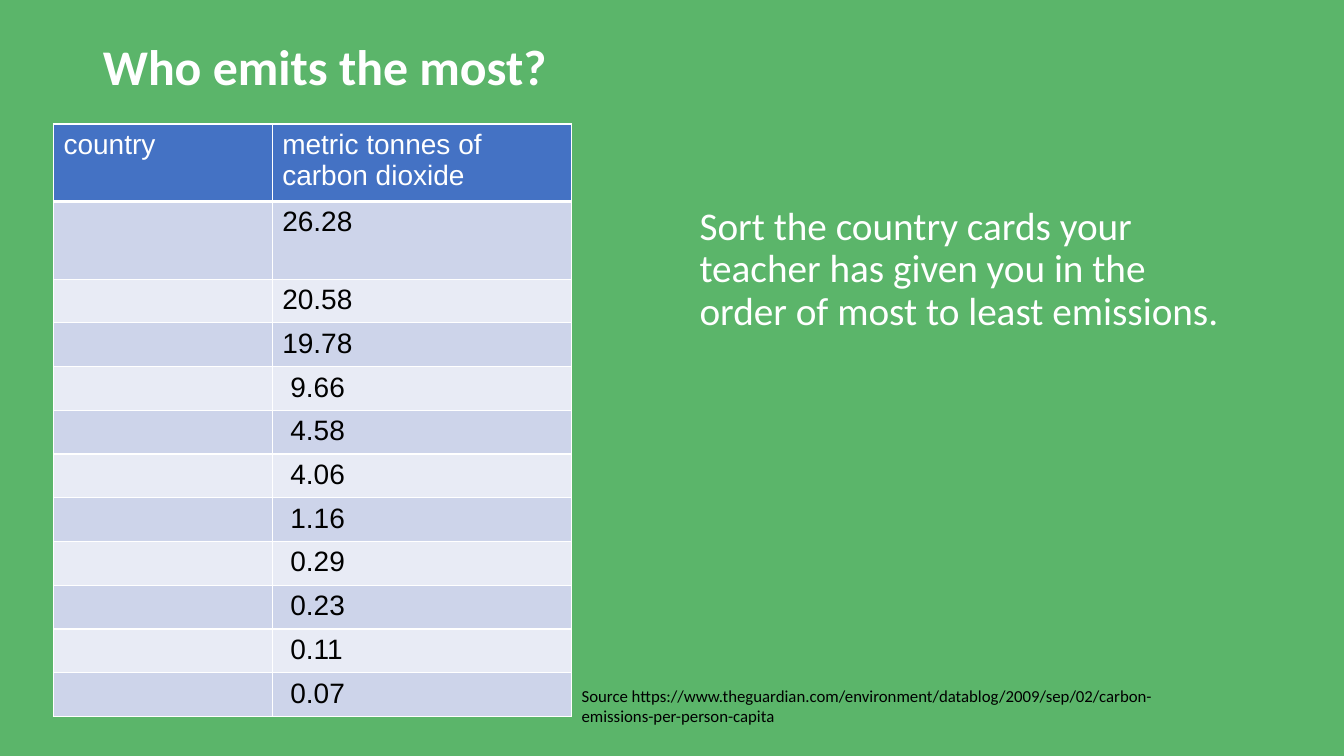
from lxml import etree
from pptx import Presentation
from pptx import util as u
from pptx.dml.color import RGBColor
from pptx.enum import text as t
from pptx.oxml.ns import qn

PX = 9144  # 100 px to the inch
HUES = {
    "green": "5BB56A", "blue": "4472C4", "dark": "CDD4EA", "pale": "E8EBF5",
    "white": "FFFFFF", "black": "000000",
}
TONNES = ["26.28", "20.58", "19.78", "9.66", "4.58", "4.06",
          "1.16", "0.29", "0.23", "0.11", "0.07"]


def hue(name):
    return RGBColor.from_string(HUES[name])


class Deck:
    def __init__(self):
        self.prs = Presentation()
        self.prs.slide_width = 1333 * PX
        self.prs.slide_height = 750 * PX
        self.slide = self.prs.slides.add_slide(self.prs.slide_layouts[5])
        fill = self.slide.background.fill
        fill.solid()
        fill.fore_color.rgb = hue("green")

    def style(self, para, size, color, face="Calibri", bold=False):
        font = para.font
        font.name, font.size, font.bold = face, u.Pt(size), bold
        font.color.rgb = hue(color)

    def title(self, words, x, y, w, h):
        box = self.slide.shapes.title
        box.left, box.top, box.width, box.height = (n * PX for n in (x, y, w, h))
        frame = box.text_frame
        frame.text = words
        frame.auto_size = t.MSO_AUTO_SIZE.NONE
        frame.vertical_anchor = t.MSO_ANCHOR.MIDDLE
        para = frame.paragraphs[0]
        para.alignment = t.PP_ALIGN.LEFT
        para.line_spacing = 0.9
        self.style(para, 35.6, "white", bold=True)

    def text(self, words, x, y, w, h, size, color, lead=1.0):
        box = self.slide.shapes.add_textbox(*(n * PX for n in (x, y, w, h)))
        frame = box.text_frame
        frame.word_wrap = True
        frame.text = words
        para = frame.paragraphs[0]
        para.line_spacing = lead
        self.style(para, size, color)

    def edge(self, cell, top, base):
        """Draw white borders round a cell, widths in points."""
        props = cell._tc.get_or_add_tcPr()
        sides = {"lnL": 1, "lnR": 1, "lnT": top, "lnB": base}
        for i, (side, width) in enumerate(sides.items()):
            line = etree.Element(qn(f"a:{side}"), w=str(u.Pt(width)))
            solid = etree.SubElement(line, qn("a:solidFill"))
            etree.SubElement(solid, qn("a:srgbClr"), val=HUES["white"])
            props.insert(i, line)

    def table(self, rows, x, y, cols, highs):
        frame = self.slide.shapes.add_table(
            len(rows), len(cols), x * PX, y * PX, sum(cols) * PX, sum(highs) * PX)
        grid = frame.table
        for col, w in zip(grid.columns, cols):
            col.width = w * PX
        for i, (row, h) in enumerate(zip(rows, highs)):
            grid.rows[i].height = h * PX
            back = "blue" if i == 0 else "dark" if i % 2 else "pale"
            for j, words in enumerate(row):
                cell = grid.cell(i, j)
                cell.text = words
                # one-digit values sit a little further in
                cell.margin_left = (18 if words.find(".") == 1 else 10) * PX
                cell.fill.solid()
                cell.fill.fore_color.rgb = hue(back)
                self.edge(cell, 3 if i == 1 else 1, 3 if i == 0 else 1)
                self.style(cell.text_frame.paragraphs[0], 20,
                           "black" if i else "white", "Arial")


def main():
    deck = Deck()
    deck.title("Who emits the most?", 92, 40, 1150, 57)
    deck.text("Sort the country cards your teacher has given you in the "
              "order of most to least emissions.",
              684, 200, 557, 476, 28, "white", 0.9)
    deck.text("Source https://www.theguardian.com/environment/datablog/2009/"
              "sep/02/carbon-emissions-per-person-capita",
              567, 675, 636, 81, 12, "black")
    rows = [("country", "metric tonnes of carbon dioxide")]
    rows += [("", value) for value in TONNES]
    deck.table(rows, 53, 123, (217, 297), [77, 77] + [43] * 10)
    deck.prs.save("out.pptx")


if __name__ == "__main__":
    main()
